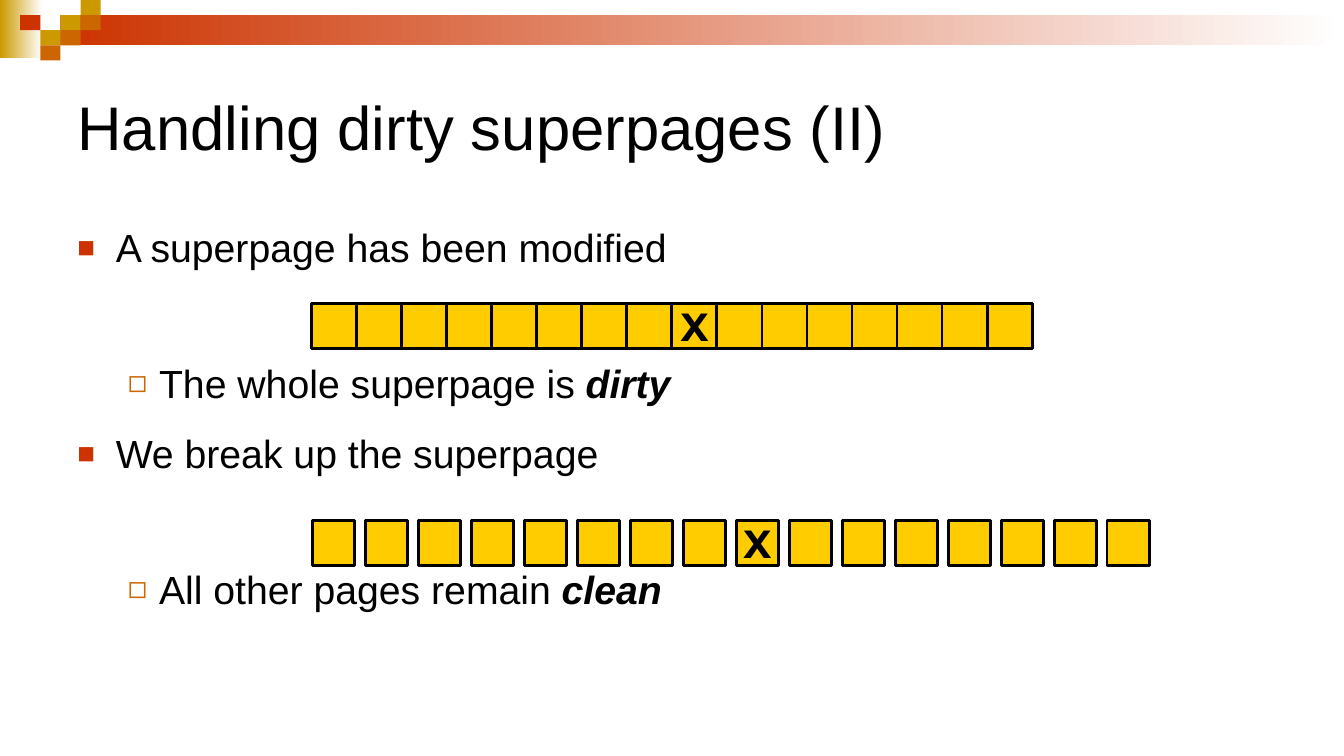
from lxml.etree import SubElement
from pptx import Presentation
from pptx.dml.color import RGBColor
from pptx.enum.shapes import MSO_SHAPE as Shape
from pptx.enum.text import MSO_ANCHOR as Anchor, PP_ALIGN as Align
from pptx.oxml.ns import qn
from pptx.util import Pt

PX = 9144
BLACK = RGBColor(0x00, 0x00, 0x00)
WHITE = RGBColor(0xFF, 0xFF, 0xFF)
RED = RGBColor(0xCC, 0x33, 0x00)
ORANGE = RGBColor(0xCC, 0x66, 0x00)
GOLD = RGBColor(0xCC, 0x99, 0x00)
YELLOW = RGBColor(0xFF, 0xCC, 0x00)

TILE_WIDTH, TILE_HEIGHT = 20, 15
TILES = [
    (3, 1, GOLD), (4, 0, GOLD), (4, 1, ORANGE), (2, 2, GOLD),
    (1, 1, RED), (3, 2, ORANGE), (2, 3, ORANGE),
]
PAGE_COUNT = 16
MODIFIED_PAGE = 8

BULLETS = {
    0: dict(margin=38, hanging=38, symbol="■", color=RED, percent=75),
    1: dict(margin=81, hanging=31, symbol="◻", color=ORANGE, percent=80),
}
POINTS = [
    (0, 20, "A superpage has been modified", ""),
    (1, 225, "The whole superpage is ", "dirty"),
    (0, 60, "We break up the superpage", ""),
    (1, 225, "All other pages remain ", "clean"),
]


def emu(*lengths):
    return [round(length * PX) for length in lengths]


def write(paragraph, text, size=28, font="Arial", color=BLACK, bold=False, italic=False):
    run = paragraph.add_run()
    run.text = text
    run.font.size = Pt(size)
    run.font.name = font
    run.font.color.rgb = color
    run.font.bold = bold
    run.font.italic = italic


def add_rect(shapes, box, color, fade_to=None, outline=None):
    rect = shapes.add_shape(Shape.RECTANGLE, *emu(*box))
    rect.shadow.inherit = False
    if fade_to is None:
        rect.fill.solid()
        rect.fill.fore_color.rgb = color
    else:
        rect.fill.gradient()
        rect.fill.gradient_angle = 0
        for stop, stop_color in zip(rect.fill.gradient_stops, (color, fade_to)):
            stop.color.rgb = stop_color
    if outline is None:
        rect.line.fill.background()
    else:
        rect.line.color.rgb = outline
        rect.line.width = Pt(2)
    return rect


def add_frame(slide, box, anchor):
    frame = slide.shapes.add_textbox(*emu(*box)).text_frame
    frame.word_wrap = True
    frame.vertical_anchor = anchor
    return frame


def add_bullet(paragraph, space_percent, margin, hanging, symbol, color, percent):
    properties = paragraph._p.get_or_add_pPr()
    margin, indent = emu(margin, -hanging)
    properties.set("marL", str(margin))
    properties.set("indent", str(indent))
    spacing = SubElement(properties, qn("a:spcBef"))
    SubElement(spacing, qn("a:spcPct"), val=str(space_percent * 1000))
    bullet_color = SubElement(properties, qn("a:buClr"))
    SubElement(bullet_color, qn("a:srgbClr"), val=str(color))
    SubElement(properties, qn("a:buSzPct"), val=str(percent * 1000))
    SubElement(properties, qn("a:buFont"), typeface="Arial")
    SubElement(properties, qn("a:buChar"), char=symbol)


def add_banner(slide, box):
    left, top, width, height = box
    shapes = slide.shapes.add_group_shape().shapes
    add_rect(shapes, (left, top, 42, height - 2), GOLD, fade_to=WHITE)
    bar_left = 3 * TILE_WIDTH
    add_rect(shapes, (left + bar_left, top + TILE_HEIGHT, width - bar_left, 2 * TILE_HEIGHT),
             RED, fade_to=WHITE)
    for column, row, color in TILES:
        tile = (left + column * TILE_WIDTH, top + row * TILE_HEIGHT, TILE_WIDTH, TILE_HEIGHT)
        add_rect(shapes, tile, color)


def add_title(slide, box):
    frame = add_frame(slide, box, Anchor.MIDDLE)
    write(frame.paragraphs[0], "Handling dirty superpages (II)", size=44)


def add_points(slide, box):
    frame = add_frame(slide, box, Anchor.TOP)
    for index, (level, space_percent, statement, state) in enumerate(POINTS):
        point = frame.add_paragraph() if index else frame.paragraphs[0]
        point.level = level
        add_bullet(point, space_percent, **BULLETS[level])
        write(point, statement)
        if state:
            write(point, state, bold=True, italic=True)


def add_pages(slide, box, page_width):
    left, top, width, height = box
    pitch = (width - page_width) / (PAGE_COUNT - 1)
    shapes = slide.shapes.add_group_shape().shapes
    for index in range(PAGE_COUNT):
        page = add_rect(shapes, (left + index * pitch, top, page_width, height),
                        YELLOW, outline=BLACK)
        if index == MODIFIED_PAGE:
            frame = page.text_frame
            frame.word_wrap = False
            frame.vertical_anchor = Anchor.MIDDLE
            mark = frame.paragraphs[0]
            mark.alignment = Align.CENTER
            write(mark, "X", font="Montserrat", bold=True)


def main():
    deck = Presentation()
    deck.slide_width, deck.slide_height = emu(1333, 750)
    slide = deck.slides.add_slide(deck.slide_layouts[6])
    add_banner(slide, (0, 0, 1333, 60))
    add_title(slide, (67, 50, 1200, 150))
    add_points(slide, (67, 217, 1200, 425))
    add_pages(slide, (309, 301, 715, 45), page_width=45)
    add_pages(slide, (310, 516, 830, 45), page_width=42)
    deck.save("out.pptx")


if __name__ == "__main__":
    main()
